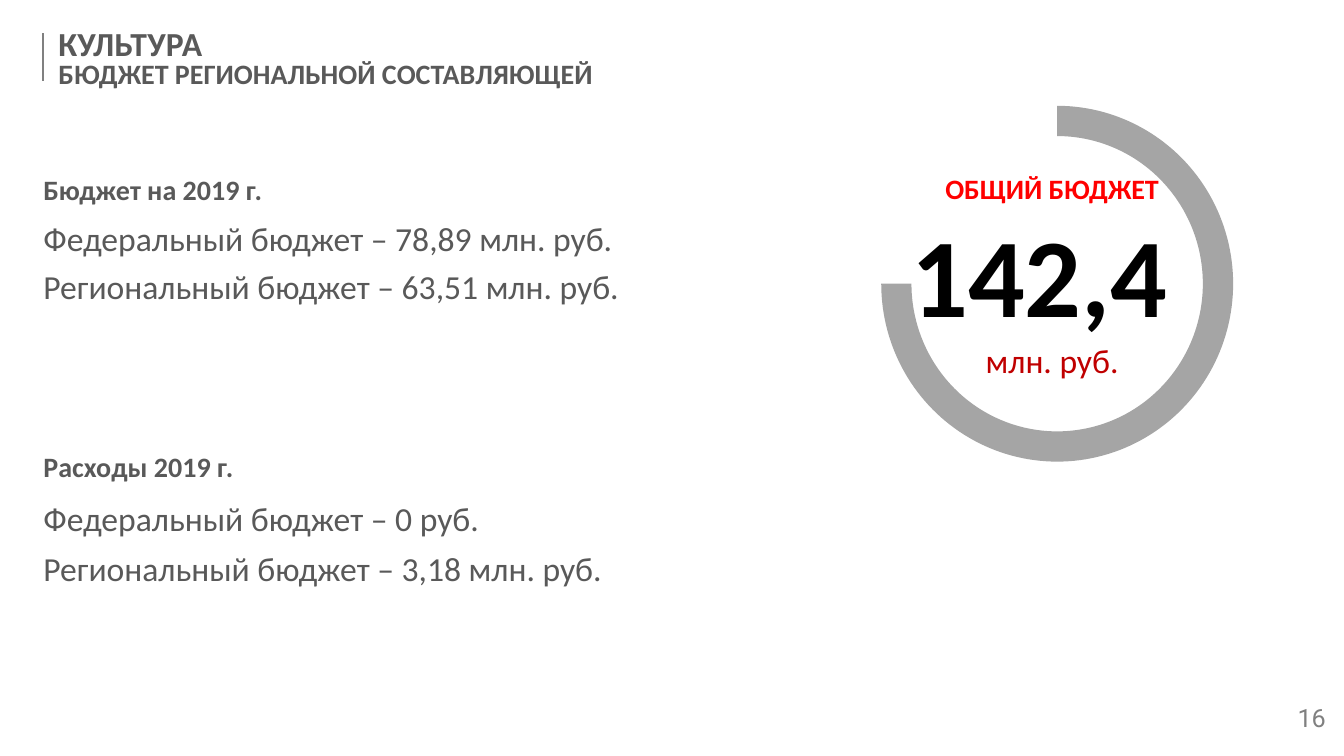
from lxml import etree
from pptx import Presentation
from pptx import util as u
from pptx.dml.color import RGBColor
from pptx.enum import shapes, text
from pptx.oxml.ns import qn

COLORS = {
    "text": "595959",
    "muted": "808080",
    "ring": "A5A5A5",
    "accent": "FF0000",
    "total": "000000",
    "unit": "C00000",
}
LEFT, CENTER, JUSTIFY = text.PP_ALIGN.LEFT, text.PP_ALIGN.CENTER, text.PP_ALIGN.JUSTIFY
TOP, MIDDLE = text.MSO_ANCHOR.TOP, text.MSO_ANCHOR.MIDDLE


class SlideBuilder:
    font_name = "Calibri"

    def __init__(self, slide):
        self.slide = slide

    def color(self, name):
        return RGBColor.from_string(COLORS[name])

    def box(self, left, top, width, height):
        return [u.Inches(value) for value in (left, top, width, height)]

    def fill_text(self, shape, lines, align, anchor=TOP, line_spacing=1.0, gap=0, font_name=None):
        frame = shape.text_frame
        frame.word_wrap = True
        frame.auto_size = text.MSO_AUTO_SIZE.NONE
        frame.vertical_anchor = anchor
        for index, (content, size, color, bold) in enumerate(lines):
            paragraph = frame.paragraphs[0] if index == 0 else frame.add_paragraph()
            paragraph.text = content
            paragraph.alignment = align
            paragraph.line_spacing = line_spacing
            paragraph.space_before = u.Pt(0)
            paragraph.space_after = u.Pt(gap)
            paragraph.font.name = font_name or self.font_name
            paragraph.font.size = u.Pt(size)
            paragraph.font.bold = bold
            paragraph.font.color.rgb = self.color(color)
            properties = paragraph._p.get_or_add_pPr()
            properties.set("marL", "0")
            properties.set("indent", "0")
            properties.insert_element_before(
                etree.SubElement(properties, qn("a:buNone")), "a:tabLst", "a:defRPr", "a:extLst"
            )

    def placeholder(self, index, position, lines, align, **style):
        shape = self.slide.placeholders[index]
        shape.left, shape.top, shape.width, shape.height = self.box(*position)
        self.fill_text(shape, lines, align, **style)

    def textbox(self, position, lines, **style):
        shape = self.slide.shapes.add_textbox(*self.box(*position))
        self.fill_text(shape, lines, CENTER, anchor=MIDDLE, **style)

    def line(self, x, top, bottom):
        connector = self.slide.shapes.add_connector(
            shapes.MSO_CONNECTOR.STRAIGHT,
            u.Inches(x), u.Inches(top), u.Inches(x), u.Inches(bottom),
        )
        connector.line.color.rgb = self.color("muted")
        connector.line.width = u.Pt(1.5)
        etree.SubElement(connector._element.spPr, qn("a:effectLst"))

    def ring(self, position, start, end, thickness):
        shape = self.slide.shapes.add_shape(
            shapes.MSO_SHAPE.BLOCK_ARC, *self.box(*position)
        )
        degree = 0.6
        shape.adjustments[0] = start * degree
        shape.adjustments[1] = end * degree
        shape.adjustments[2] = thickness / min(position[2:])
        shape.shadow.inherit = False
        shape.fill.solid()
        shape.fill.fore_color.rgb = self.color("ring")
        shape.line.fill.background()


def main():
    presentation = Presentation()
    presentation.slide_width = u.Inches(13.33)
    presentation.slide_height = u.Inches(7.5)
    slide = presentation.slides.add_slide(presentation.slide_layouts.get_by_name("Comparison"))
    builder = SlideBuilder(slide)

    builder.line(0.43, 0.33, 0.8)
    builder.placeholder(
        0,
        (0.48, 0.26, 12.6, 0.67),
        [("КУЛЬТУРА", 24, "text", True),
         ("БЮДЖЕТ РЕГИОНАЛЬНОЙ СОСТАВЛЯЮЩЕЙ", 20, "text", True)],
        LEFT, anchor=MIDDLE, line_spacing=0.8,
    )

    sections = [
        (1.66, 2.11, 5.3, "Бюджет на 2019 г.",
         ["Федеральный бюджет – 78,89 млн. руб.", "Региональный бюджет – 63,51 млн. руб."]),
        (4.41, 4.89, 6.7, "Расходы 2019 г.",
         ["Федеральный бюджет – 0 руб.", "Региональный бюджет – 3,18 млн. руб."]),
    ]
    for number, (heading_top, list_top, gap, heading, items) in enumerate(sections):
        index = 1 + 2 * number
        builder.placeholder(
            index, (0.33, heading_top, 5.66, 0.44), [(heading, 20, "text", True)], JUSTIFY
        )
        builder.placeholder(
            index + 1, (0.33, list_top, 6.33, 1),
            [(item, 24, "text", False) for item in items], JUSTIFY, gap=gap,
        )

    builder.ring((8.74, 1.05, 3.49, 3.53), 270, 180, 0.3)
    builder.textbox(
        (8.86, 1.64, 3.15, 2.19),
        [("ОБЩИЙ БЮДЖЕТ", 20, "accent", True),
         ("142,4 ", 80, "total", True),
         ("млн. руб.", 24, "unit", False)],
    )
    builder.textbox(
        (12.43, 6.9, 1.16, 0.5), [("16", 18, "muted", False)],
        line_spacing=0.8, font_name="Roboto",
    )
    presentation.save("out.pptx")


if __name__ == "__main__":
    main()
